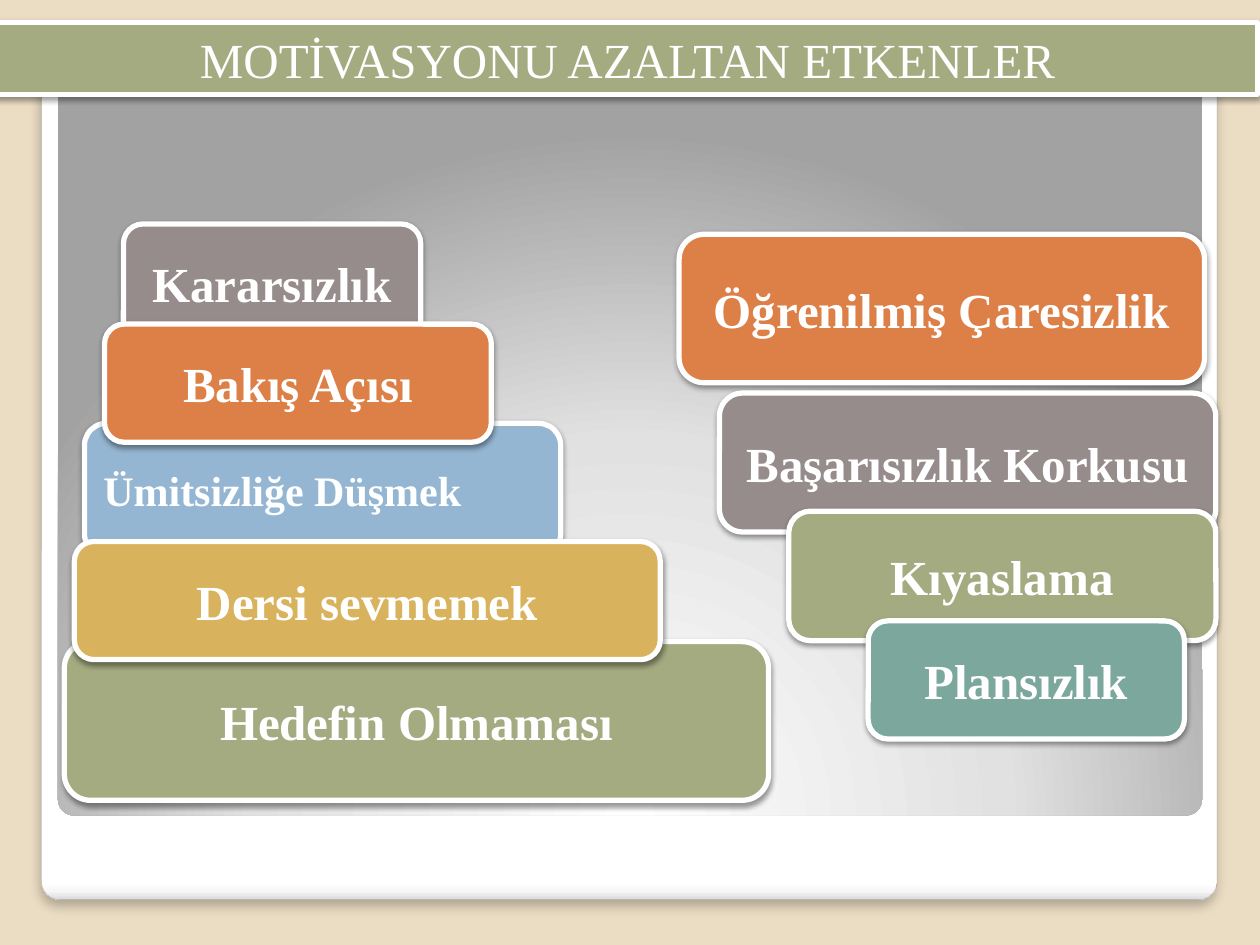
from pptx import Presentation
from pptx.dml.color import RGBColor
from pptx.enum.shapes import MSO_SHAPE as Shape
from pptx.enum.text import MSO_ANCHOR as Anchor, MSO_AUTO_SIZE as AutoSize, PP_ALIGN as Align
from pptx.oxml import parse_xml
from pptx.oxml.ns import nsdecls
from pptx.util import Inches, Pt

WIDTH, HEIGHT = Inches(10), Inches(7.5)
FONT = "Times New Roman"
WHITE, OLIVE, ORANGE, TAUPE = "FFFFFF", "A5AB81", "DD8047", "968C8C"
BLUE, GOLD, TEAL = "94B6D2", "D8B25C", "7BA79D"

FACTORS = [
    ("Ümitsizliğe Düşmek", BLUE, (6.7, 44.8, 37.8, 14), {"size": 24, "align": Align.LEFT}),
    ("Hedefin Olmaması", OLIVE, (5.1, 67.9, 55.9, 16.8), {}),
    ("Kararsızlık", TAUPE, (9.8, 23.7, 23.6, 12.5), {}),
    ("Dersi sevmemek", GOLD, (5.9, 57.3, 46.5, 12.5), {}),
    ("Bakış Açısı", ORANGE, (8.3, 34.3, 30.7, 12.5), {}),
    ("Öğrenilmiş Çaresizlik", ORANGE, (53.9, 24.8, 41.7, 15.7), {}),
    ("Başarısızlık Korkusu", TAUPE, (57.1, 41.6, 39.4, 14.7), {}),
    ("Kıyaslama", OLIVE, (62.6, 54.1, 33.9, 13.7), {}),
    ("Plansızlık", TEAL, (68.9, 65.7, 25.1, 12.5), {}),
]


def rgb(value):
    """Turn a hex string into a colour."""
    return RGBColor.from_string(value)


def place(box):
    """Turn percent shares of the slide into left, top, width and height."""
    return [int(share * side / 100) for share, side in zip(box, (WIDTH, HEIGHT) * 2)]


def add_shadow(sp, opacity=38, blur=3.1, dist=1.6):
    """Drop a soft black shadow straight down."""
    sp._element.spPr.append(parse_xml(
        f'<a:effectLst {nsdecls("a")}><a:outerShdw blurRad="{Pt(blur)}" dist="{Pt(dist)}" '
        f'dir="5400000" algn="t" rotWithShape="0"><a:srgbClr val="000000">'
        f'<a:alpha val="{opacity * 1000}"/></a:srgbClr></a:outerShdw></a:effectLst>'))


def style_card(sp, color):
    """Give a shape a flat fill, a white border and a shadow."""
    sp.fill.solid()
    sp.fill.fore_color.rgb = rgb(color)
    sp.line.color.rgb = rgb(WHITE)
    sp.line.width = Pt(3)
    add_shadow(sp)


def write(sp, text, size=28, bold=True, align=Align.CENTER):
    """Write one white line of text in the middle of a shape."""
    tf = sp.text_frame
    tf.word_wrap = True
    tf.auto_size = AutoSize.NONE
    tf.vertical_anchor = Anchor.MIDDLE
    p = tf.paragraphs[0]
    p.alignment = align
    r = p.add_run()
    r.text = text
    r.font.name, r.font.size, r.font.bold = FONT, Pt(size), bold
    r.font.color.rgb = rgb(WHITE)


def add_panel(s, box, stops, direction):
    """Add a backdrop with slightly rounded corners and a gradient."""
    sp = s.shapes.add_shape(Shape.ROUNDED_RECTANGLE, *place(box))
    sp.adjustments[0] = 0.021
    colors = "".join(f'<a:gs pos="{pos * 1000}"><a:srgbClr val="{color}"/></a:gs>'
                     for pos, color in stops)
    sp._element.spPr.insert(2, parse_xml(
        f'<a:gradFill {nsdecls("a")} rotWithShape="1"><a:gsLst>{colors}</a:gsLst>'
        f'{direction}</a:gradFill>'))
    sp.line.fill.background()
    return sp


def add_backdrop(s):
    """Add the white sheet and the grey panel on it."""
    sheet = add_panel(s, (3.3, 4.8, 93.3, 90.4),
                      [(0, WHITE), (98, WHITE), (99, "F7F7F7"), (100, "DADADA")],
                      '<a:lin ang="5400000" scaled="0"/>')
    sheet.line.color.rgb = rgb("A4A4A4")
    sheet.line.width = Pt(0.16)
    add_shadow(sheet, opacity=25, blur=6, dist=4)
    panel = add_panel(s, (4.6, 6.3, 90.8, 80),
                      [(0, WHITE), (55, "E1E1E1"), (100, "A2A2A2")],
                      '<a:path path="circle"><a:fillToRect l="50000" t="175000" '
                      'r="50000" b="-75000"/></a:path>')
    panel.shadow.inherit = False


def add_title(s, text):
    """Turn the title placeholder into a banner above the backdrop."""
    sp = s.shapes.title
    sp.left, sp.top, sp.width, sp.height = place((-0.2, 2.4, 100, 7.6))
    style_card(sp, OLIVE)
    write(sp, text, bold=False)
    s.shapes._spTree.append(sp._element)


def add_factor(s, text, color, box, style):
    """Add one rounded card with its label."""
    sp = s.shapes.add_shape(Shape.ROUNDED_RECTANGLE, *place(box))
    style_card(sp, color)
    write(sp, text, **style)


def main():
    """Build the slide and save it."""
    prs = Presentation()
    prs.slide_width, prs.slide_height = WIDTH, HEIGHT
    s = prs.slides.add_slide(prs.slide_layouts[5])
    s.background.fill.solid()
    s.background.fill.fore_color.rgb = rgb("EBDDC3")
    add_backdrop(s)
    add_title(s, "MOTİVASYONU AZALTAN ETKENLER")
    for factor in FACTORS:
        add_factor(s, *factor)
    prs.save("out.pptx")


if __name__ == "__main__":
    main()
